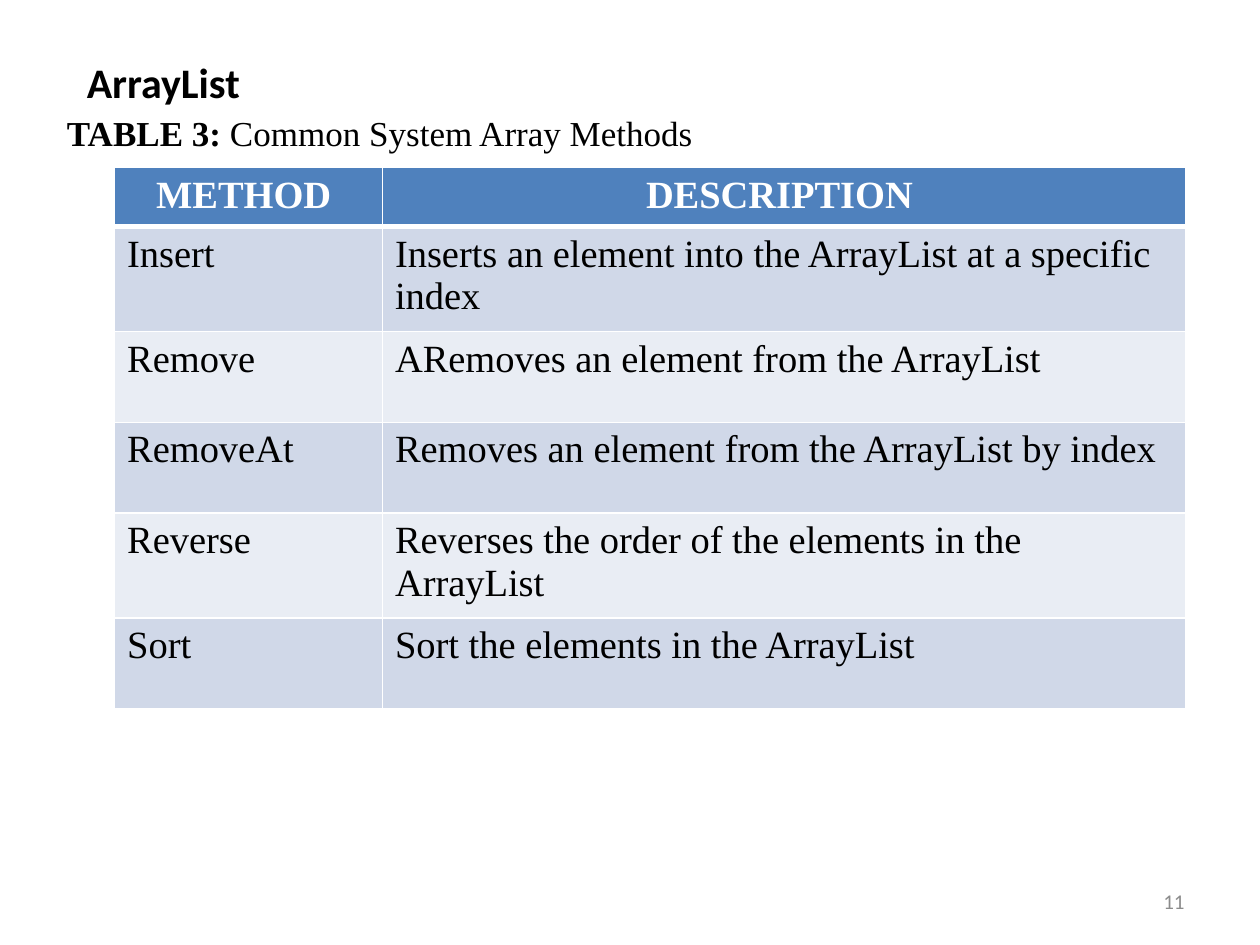
from lxml.etree import SubElement
from pptx import Presentation
from pptx.dml.color import RGBColor
from pptx.enum.text import MSO_ANCHOR, MSO_AUTO_SIZE, PP_ALIGN
from pptx.oxml.ns import qn
from pptx.util import Cm, Pt

BLACK = RGBColor(0x00, 0x00, 0x00)
WHITE = RGBColor(0xFF, 0xFF, 0xFF)
GREY = RGBColor(0x8C, 0x8C, 0x8C)
HEADER_BLUE = RGBColor(0x4F, 0x81, 0xBD)
BANDS = (RGBColor(0xD0, 0xD8, 0xE8), RGBColor(0xE9, 0xED, 0xF4))
SERIF, SANS = "Times New Roman", "Calibri"

METHODS = [
    ("METHOD ", "DESCRIPTION "),
    ("Insert", "Inserts an element into the ArrayList at a specific index"),
    ("Remove", "ARemoves an element from the ArrayList"),
    ("RemoveAt", "Removes an element from the ArrayList by index"),
    ("Reverse", "Reverses the order of the elements in the ArrayList"),
    ("Sort", "Sort the elements in the ArrayList"),
]
COLUMN_WIDTHS = (5.4, 16.2)
ROW_HEIGHTS = (1.12, 1.83, 1.83, 1.83, 1.95, 1.83)


def add_span(para, text, font=SERIF, size=22, color=BLACK, bold=False):
    span = para.add_run()
    span.text = text
    span.font.name = font
    span.font.size = Pt(size)
    span.font.color.rgb = color
    span.font.bold = bold


def add_box(page, left, top, width, height, wrap=True, grow=True):
    """Add a text box and return its text frame."""
    box = page.shapes.add_textbox(Cm(left), Cm(top), Cm(width), Cm(height))
    frame = box.text_frame
    frame.word_wrap = wrap
    frame.auto_size = MSO_AUTO_SIZE.SHAPE_TO_FIT_TEXT if grow else MSO_AUTO_SIZE.NONE
    return frame


def set_borders(cell, color, bottom_width):
    properties = cell._tc.get_or_add_tcPr()
    for side, width in (("lnL", 1), ("lnR", 1), ("lnT", 1), ("lnB", bottom_width)):
        line = SubElement(properties, qn(f"a:{side}"), w=str(Pt(width)))
        fill = SubElement(line, qn("a:solidFill"))
        SubElement(fill, qn("a:srgbClr"), val=str(color))


def add_method_table(page, left, top):
    frame = page.shapes.add_table(
        len(METHODS), len(COLUMN_WIDTHS), Cm(left), Cm(top),
        Cm(sum(COLUMN_WIDTHS)), Cm(sum(ROW_HEIGHTS)))
    table = frame.table
    for column, width in zip(table.columns, COLUMN_WIDTHS):
        column.width = Cm(width)
    for row_index, (texts, height) in enumerate(zip(METHODS, ROW_HEIGHTS)):
        row = table.rows[row_index]
        row.height = Cm(height)
        header = row_index == 0
        for cell, text in zip(row.cells, texts):
            set_borders(cell, WHITE, bottom_width=3 if header else 1)
            cell.fill.solid()
            cell.fill.fore_color.rgb = HEADER_BLUE if header else BANDS[(row_index - 1) % 2]
            para = cell.text_frame.paragraphs[0]
            para.alignment = PP_ALIGN.CENTER if header else PP_ALIGN.LEFT
            add_span(para, text, color=WHITE if header else BLACK, bold=header)


def main():
    deck = Presentation()
    deck.slide_width, deck.slide_height = Cm(25.4), Cm(19.05)
    page = deck.slides.add_slide(deck.slide_layouts[6])

    caption = add_box(page, 1.1, 2.13, 22.2, 1.11).paragraphs[0]
    add_span(caption, "TABLE 3: ", size=20, bold=True)
    add_span(caption, "Common System Array Methods", size=20)

    title = add_box(page, 1.5, 1.02, 3.78, 1.28, wrap=False).paragraphs[0]
    add_span(title, "ArrayList", font=SANS, size=24, bold=True)
    add_span(title, " ", font=SANS, size=18)

    add_method_table(page, 2.31, 3.38)

    footer = add_box(page, 18.2, 17.66, 5.93, 1.01, grow=False)
    footer.vertical_anchor = MSO_ANCHOR.MIDDLE
    number = footer.paragraphs[0]
    number.alignment = PP_ALIGN.RIGHT
    add_span(number, "11", font=SANS, size=12, color=GREY)

    deck.save("out.pptx")


if __name__ == "__main__":
    main()
